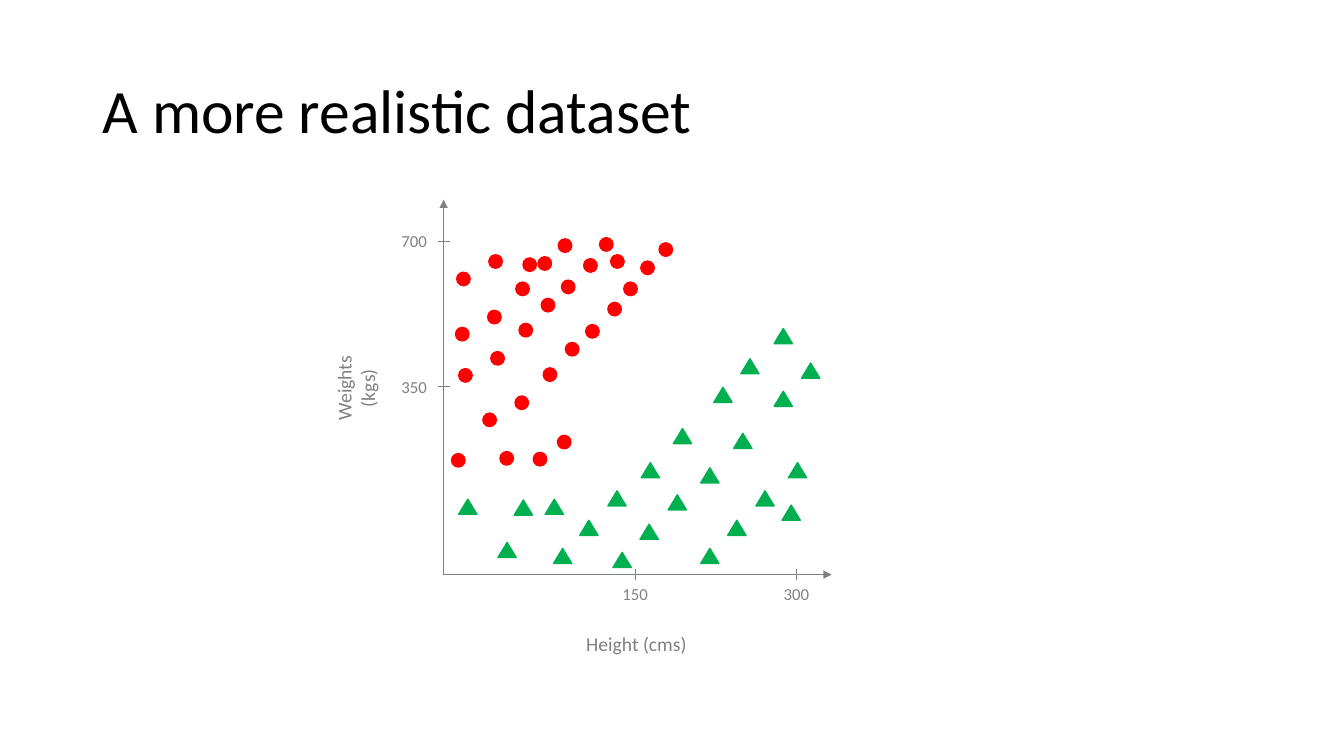
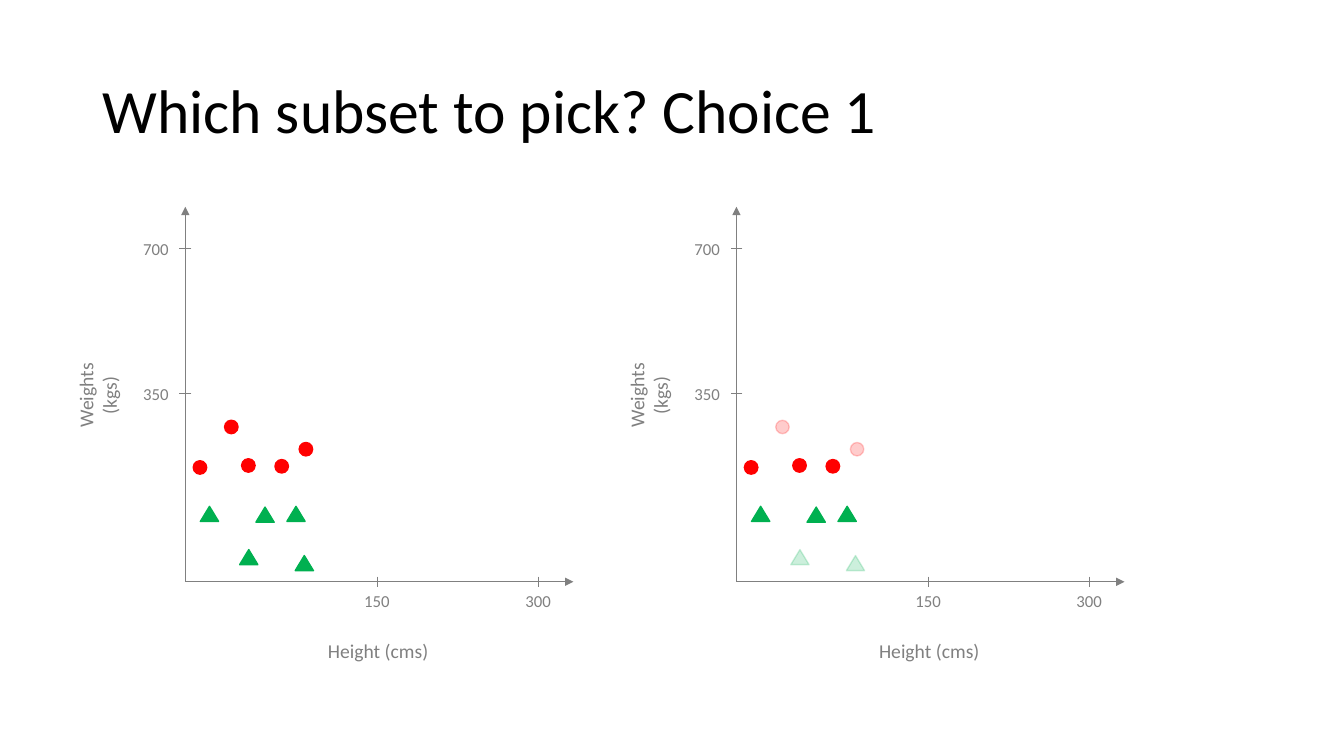
import pptx
import pptx.dml.color
import pptx.enum.shapes
import pptx.enum.text
import pptx.oxml.ns
import pptx.util
import lxml.etree

Cm = pptx.util.Cm
Pt = pptx.util.Pt
KIND = pptx.enum.shapes.MSO_SHAPE
ALIGN = pptx.enum.text.PP_ALIGN
MIDDLE = pptx.enum.text.MSO_ANCHOR.MIDDLE
qn = pptx.oxml.ns.qn

# Shared look
FONT = "Calibri"
GREY, RED, GREEN, BLACK = "808080", "FF0000", "00B050", "000000"
TITLE = {"left": Cm(2.33), "top": Cm(1.01), "width": Cm(29.21), "height": Cm(3.68)}
AXES = 9.78, 9.45  # width and height of the plot area
MARKS = {  # preset, colour, width, height
    "dot": (KIND.OVAL, RED, 0.34, 0.34),
    "tri": (KIND.ISOSCELES_TRIANGLE, GREEN, 0.46, 0.38),
}

# Mark centres in cm, right of and above the axis corner
FAINT = {
    "dot": [(1.16, 3.9), (3.04, 3.34)],
    "tri": [(3, 0.47), (1.6, 0.62)],
}
CORE = {
    "dot": [(0.37, 2.88), (1.59, 2.93), (2.43, 2.91)],
    "tri": [(2.01, 1.69), (0.61, 1.71), (2.79, 1.71)],
}
FAR = {
    "dot": [
        (4.38, 7.89), (2.17, 7.81), (5.6, 8.19), (5.14, 7.73),
        (4.71, 7.2), (4.31, 6.69), (3.75, 6.13), (3.24, 5.68),
        (2.68, 5.04), (1.97, 4.33), (0.55, 5.02), (4.1, 8.32),
        (3.7, 7.79), (3.14, 7.25), (2.63, 6.79), (2.07, 6.16),
        (1.36, 5.45), (0.47, 6.06), (3.06, 8.29), (2.55, 7.84),
        (1.99, 7.2), (1.28, 6.49), (0.5, 7.45), (1.31, 7.89),
    ],
    "tri": [
        (8.76, 1.56), (3.66, 1.18), (4.37, 1.92), (5.21, 2.63),
        (6.02, 3.49), (7.04, 4.53), (7.72, 5.25), (8.56, 6.01),
        (4.5, 0.37), (5.18, 1.08), (5.89, 1.82), (6.71, 2.5),
        (7.54, 3.37), (8.56, 4.43), (9.25, 5.14), (6.71, 0.47),
        (7.39, 1.18), (8.1, 1.92), (8.92, 2.63),
    ],
}


def tint(color, code):
    color.rgb = pptx.dml.color.RGBColor.from_string(code)


def apply(item, values):
    for name, value in values.items():
        setattr(item, name, value)


def style(para, size, code, **values):
    apply(para, values)
    apply(para.font, {"name": FONT, "size": Pt(size), "bold": False})
    tint(para.font.color, code)


def rule(group, start, end, arrow=False):
    """Thin grey line, with an arrowhead at its end if asked."""
    line = group.shapes.add_connector(
        pptx.enum.shapes.MSO_CONNECTOR.STRAIGHT, *map(Cm, start + end))
    line.line.width = Pt(0.5)
    tint(line.line.color, GREY)
    props = line.element.spPr
    if arrow:
        lxml.etree.SubElement(props.find(qn("a:ln")), qn("a:tailEnd"), type="triangle")
    lxml.etree.SubElement(props, qn("a:effectLst"))


def label(group, text, mid, size, turn=0):
    """Text centred on the point mid."""
    wide, high = (3.15, 0.86) if size == 14 else (1.17, 0.77)
    box = group.shapes.add_textbox(
        Cm(mid[0] - wide / 2), Cm(mid[1] - high / 2), Cm(wide), Cm(high))
    box.rotation = turn
    apply(box.text_frame, {"text": text, "word_wrap": False, "vertical_anchor": MIDDLE})
    style(box.text_frame.paragraphs[0], size, GREY, alignment=ALIGN.CENTER)


def mark(group, kind, mid, alpha):
    """One data mark centred on the point mid."""
    preset, code, wide, high = MARKS[kind]
    shape = group.shapes.add_shape(
        preset, Cm(mid[0] - wide / 2), Cm(mid[1] - high / 2), Cm(wide), Cm(high))
    shape.shadow.inherit = False
    shape.fill.solid()
    tint(shape.fill.fore_color, code)
    tint(shape.line.color, code)
    shape.line.width = Pt(1)
    if alpha < 100:
        for color in shape.element.spPr.iter(qn("a:srgbClr")):
            lxml.etree.SubElement(color, qn("a:alpha"), val=str(alpha * 1000))


def plot(slide, left, top, layers):
    """Axes with their corner at the lower left of the box, and layers of marks."""
    group = slide.shapes.add_group_shape()
    wide, high = AXES

    def at(x, y):
        return left + x, top + high - y

    # Axes and their names
    rule(group, at(0, 0), at(0, high), arrow=True)
    rule(group, at(0, 0), at(wide, 0), arrow=True)
    label(group, "Height (cms)", at(4.86, -1.73), 14)
    label(group, "Weights (kgs)", at(-2.22, 4.7), 14, turn=270)

    # Ticks
    for text, x in (("150", 4.83), ("300", 8.89)):
        rule(group, at(x, 0.13), at(x, -0.13))
        label(group, text, at(x, -0.48), 12)
    for text, y in (("350", 4.74), ("700", 8.4)):
        rule(group, at(0.15, y), at(-0.15, y))
        label(group, text, at(-0.74, y), 12)

    # Marks
    for marks, alpha in layers:
        for kind, spots in marks.items():
            for spot in spots:
                mark(group, kind, at(*spot), alpha)


def page(deck, text, top, plots):
    """Slide with a title and plots, each given by its left edge and layers."""
    slide = deck.slides.add_slide(deck.slide_layouts[5])
    title = slide.shapes.title
    apply(title, TITLE)
    apply(title.text_frame, {"text": text, "word_wrap": True, "vertical_anchor": MIDDLE})
    style(title.text_frame.paragraphs[0], 44, BLACK,
          alignment=ALIGN.LEFT, line_spacing=0.9)
    for left, layers in plots:
        plot(slide, left, top, layers)


def main():
    deck = pptx.Presentation()
    apply(deck, {"slide_width": Cm(33.87), "slide_height": Cm(19.05)})
    near = [(CORE, 100), (FAINT, 100)]
    page(deck, "A more realistic dataset", 5.03, [(11.18, near + [(FAR, 100)])])
    page(deck, "Which subset to pick? Choice 1", 5.21,
         [(4.67, near), (18.56, [(CORE, 100), (FAINT, 20)])])
    deck.save("out.pptx")


if __name__ == "__main__":
    main()
